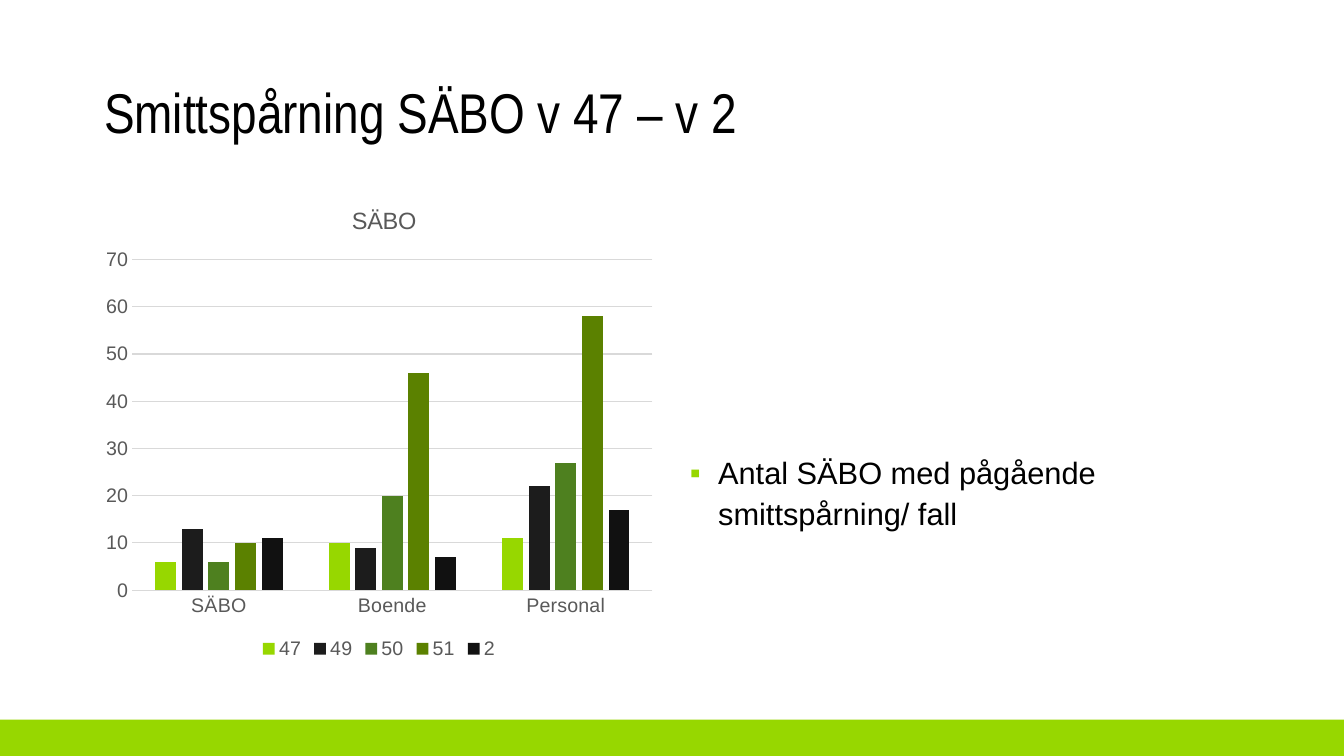
from lxml.etree import SubElement
from pptx import Presentation
from pptx.chart.data import CategoryChartData
from pptx.dml.color import RGBColor
from pptx.enum.chart import XL_CHART_TYPE, XL_LEGEND_POSITION, XL_TICK_MARK
from pptx.enum.shapes import MSO_SHAPE
from pptx.enum.text import MSO_ANCHOR, PP_ALIGN
from pptx.oxml import parse_xml
from pptx.oxml.ns import nsdecls, qn
from pptx.util import Inches, Pt

WIDE, HIGH = Inches(13.33), Inches(7.5)
COLORS = {
    "lime": "97D700", "text": "000000", "label": "595959", "grid": "D9D9D9",
    "47": "97D700", "49": "1C1C1C", "50": "4E801F", "51": "5B8100", "2": "111111",
}
GROUPS = ["SÄBO", "Boende", "Personal"]
WEEKS = {
    "47": (6, 10, 11),
    "49": (13, 9, 22),
    "50": (6, 20, 27),
    "51": (10, 46, 58),
    "2": (11, 7, 17),
}


def color(name):
    return RGBColor.from_string(COLORS[name])


def area(left, top, width, height):
    """Turn shares of the slide's size into lengths."""
    return int(left * WIDE), int(top * HIGH), int(width * WIDE), int(height * HIGH)


def style(font, size, tone, face="Arial"):
    font.name, font.size, font.bold = face, Pt(size), False
    font.color.rgb = color(tone)


def add_band(slide):
    band = slide.shapes.add_shape(MSO_SHAPE.RECTANGLE, *area(0, 0.952, 1, 0.048))
    band.shadow.inherit = False
    band.fill.solid()
    band.fill.fore_color.rgb = color("lime")
    band.line.fill.background()


def set_title(slide, text):
    title = slide.shapes.title
    title.left, title.top, title.width, title.height = area(0.07, 0.105, 0.86, 0.095)
    frame = title.text_frame
    frame.text = text
    frame.vertical_anchor = MSO_ANCHOR.MIDDLE
    para = frame.paragraphs[0]
    para.alignment, para.line_spacing = PP_ALIGN.LEFT, 0.9
    style(para.runs[0].font, 40, "text", "Arial Narrow")


def add_bullet(slide, text):
    box = slide.shapes.add_textbox(*area(0.506, 0.589, 0.424, 0.312))
    frame = box.text_frame
    frame.word_wrap = True
    frame.text = text
    para = frame.paragraphs[0]
    para.line_spacing = 1.1
    props = para._p.get_or_add_pPr()
    props.set("marL", str(Inches(0.28)))
    props.set("indent", str(-Inches(0.28)))
    tint = SubElement(props, qn("a:buClr"))
    SubElement(tint, qn("a:srgbClr"), val=COLORS["lime"])
    SubElement(props, qn("a:buFont"), typeface="Arial")
    SubElement(props, qn("a:buChar"), char="▪")
    style(para.runs[0].font, 22, "text")


def layout(inner=False, **shares):
    """Make a manual chart layout from shares of the chart's size."""
    items = {"layoutTarget": "inner"} if inner else {}
    items.update({f"{key}Mode": "edge" for key in "xy"})
    items.update(shares)
    body = "".join(f'<c:{key} val="{val}"/>' for key, val in items.items())
    return parse_xml(
        f'<c:layout {nsdecls("c")}><c:manualLayout>{body}</c:manualLayout></c:layout>')


def set_axes(chart):
    cats, vals = chart.category_axis, chart.value_axis
    for axis in (cats, vals):
        axis.major_tick_mark = axis.minor_tick_mark = XL_TICK_MARK.NONE
        style(axis.tick_labels.font, 14, "label")
    vals.minimum_scale, vals.maximum_scale, vals.major_unit = 0, 70, 10
    vals.has_major_gridlines = True
    vals.format.line.fill.background()
    for line in (cats.format.line, vals.major_gridlines.format.line):
        line.color.rgb = color("grid")
        line.width = Pt(0.75)


def set_head(chart, text):
    chart.has_title = True
    head = chart.chart_title
    head.text_frame.text = text
    style(head.text_frame.paragraphs[0].runs[0].font, 16.8, "label")
    node = head._element
    for old in node.findall(qn("c:layout")):
        node.remove(old)
    node.find(qn("c:tx")).addnext(layout(x=0.445, y=0.037))
    head.include_in_layout = False


def add_columns(slide):
    data = CategoryChartData()
    data.categories = GROUPS
    for week, counts in WEEKS.items():
        data.add_series(week, counts)
    chart = slide.shapes.add_chart(
        XL_CHART_TYPE.COLUMN_CLUSTERED, *area(0.07, 0.243, 0.424, 0.635), data).chart
    style(chart.font, 14, "text")
    set_head(chart, "SÄBO")
    set_axes(chart)
    chart.has_legend = True
    chart.legend.position = XL_LEGEND_POSITION.BOTTOM
    chart.legend.include_in_layout = False
    style(chart.legend.font, 14, "label")
    plot = chart.plots[0]
    plot.gap_width, plot.overlap, plot.vary_by_categories = 219, -27, False
    for bars in plot.series:
        bars.format.fill.solid()
        bars.format.fill.fore_color.rgb = color(bars.name)
    zone = chart._chartSpace.find(f'.//{qn("c:plotArea")}')
    for old in zone.findall(qn("c:layout")):
        zone.remove(old)
    zone.insert(0, layout(True, x=0.067, y=0.158, w=0.913, h=0.689))


def main():
    deck = Presentation()
    deck.slide_width, deck.slide_height = WIDE, HIGH
    slide = deck.slides.add_slide(deck.slide_layouts[5])
    add_band(slide)
    set_title(slide, "Smittspårning SÄBO v 47 – v 2")
    add_columns(slide)
    add_bullet(slide, "Antal SÄBO med pågående smittspårning/ fall")
    deck.save("out.pptx")


if __name__ == "__main__":
    main()
